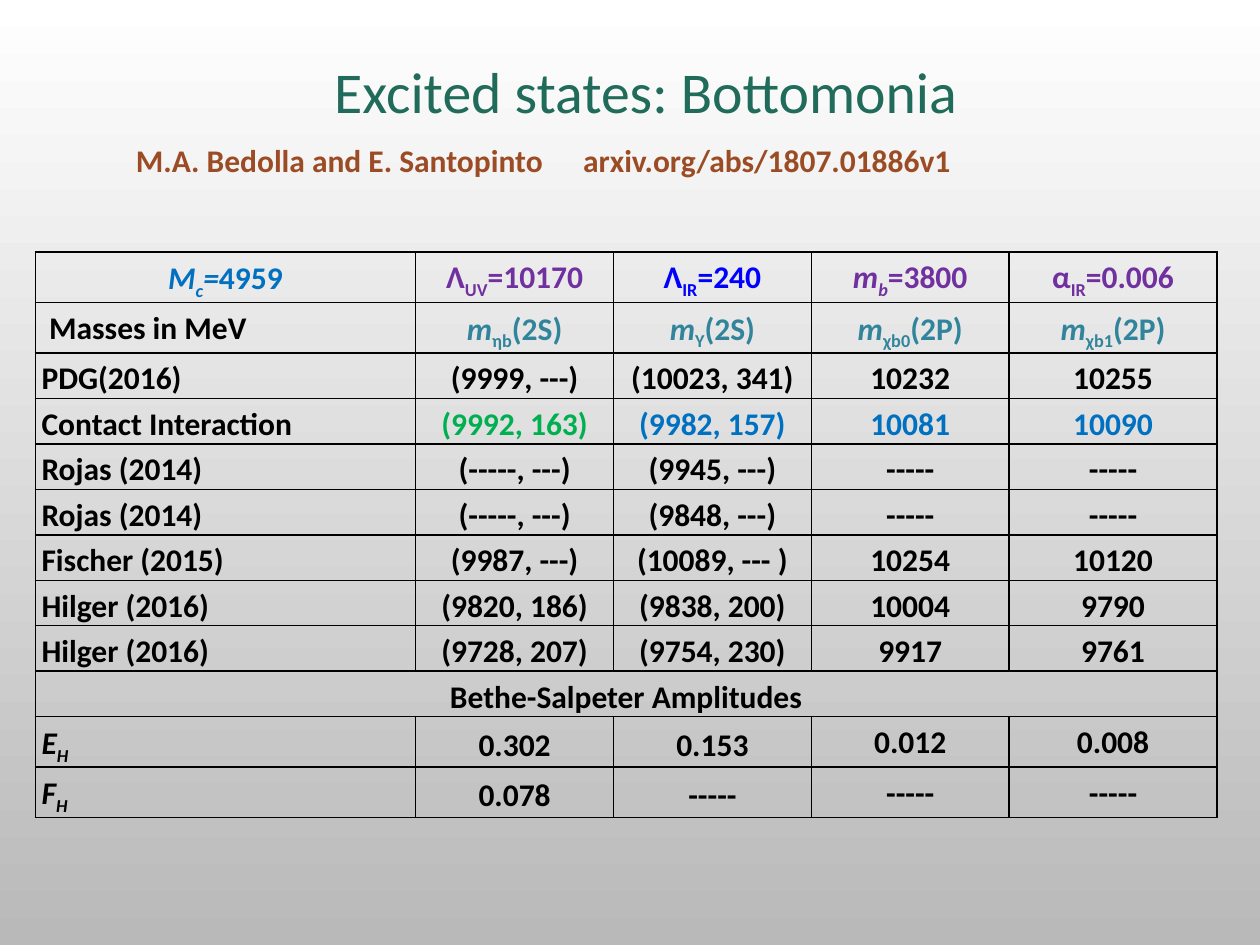
"""Build the slide comparing excited bottomonium masses and amplitudes."""
from lxml.etree import SubElement
from pptx import Presentation
from pptx.dml.color import RGBColor
from pptx.enum.text import MSO_ANCHOR, PP_ALIGN
from pptx.oxml.ns import qn
from pptx.util import Inches, Pt

TITLE = "Excited states: Bottomonia"
AUTHORS = "M.A. Bedolla and E. Santopinto"
LINK = "arxiv.org/abs/1807.01886v1"
PARAMETERS = [
    ([("M", "i"), ("c", "is"), ("=", "i"), ("4959", "")], "blue"),
    ([("Λ", ""), ("UV", "s"), ("=10170", "")], "purple"),
    ([("Λ", ""), ("IR", "s"), ("=240", "")], "bright"),
    ([("m", "i"), ("b", "is"), ("=3800", "")], "purple"),
    ([("α", ""), ("IR", "s"), ("=0.006", "")], "purple"),
]
STATES = [("ηb", "(2S)"), ("Υ", "(2S)"), ("χb0", "(2P)"), ("χb1", "(2P)")]
MASSES = [
    ("PDG(2016)", "(9999, ---)", "(10023, 341)", "10232", "10255"),
    ("Contact Interaction", "(9992, 163)", "(9982, 157)", "10081", "10090"),
    ("Rojas (2014)", "(-----, ---)", "(9945, ---)", "-----", "-----"),
    ("Rojas (2014)", "(-----, ---)", "(9848, ---)", "-----", "-----"),
    ("Fischer (2015)", "(9987, ---)", "(10089, --- )", "10254", "10120"),
    ("Hilger (2016)", "(9820, 186)", "(9838, 200)", "10004", "9790"),
    ("Hilger (2016)", "(9728, 207)", "(9754, 230)", "9917", "9761"),
]
HIGHLIGHT = ["black", "green", "blue", "blue", "blue"]
SECTION = "Bethe-Salpeter Amplitudes"
AMPLITUDES = [
    ("E", "0.302", "0.153", "0.012", "0.008"),
    ("F", "0.078", "-----", "-----", "-----"),
]
COLS = [3.02, 1.57, 1.57, 1.57, 1.65]
ROWS = [0.32, 0.4] + [0.31] * 10
THEME = {
    "font": "Calibri", "title_size": 33, "size": 18,
    "title": "206B5A", "citation": "9B4C25", "black": "000000",
    "blue": "0070C0", "bright": "0000FF", "purple": "7030A0",
    "teal": "31849B", "green": "00B050", "top": "FFFFFF", "bottom": "B9B9B9",
}


def rgb(name):
    return RGBColor.from_string(THEME[name])


def add_run(p, text, color, size="size", **formats):
    r = p.add_run()
    r.text = text
    for name, value in {"name": THEME["font"], "size": Pt(THEME[size]), **formats}.items():
        setattr(r.font, name, value)
    r.font.color.rgb = rgb(color)
    return r


def add_borders(cell):
    tc_pr = cell._tc.get_or_add_tcPr()
    for side in ("lnL", "lnR", "lnT", "lnB"):
        ln = SubElement(tc_pr, qn(f"a:{side}"), w=str(Pt(1)))
        fill = SubElement(ln, qn("a:solidFill"))
        SubElement(fill, qn("a:srgbClr"), val=THEME["black"])


def fill_cell(cell, runs, color, centered, formats):
    for name, value in formats.items():
        setattr(cell, name, value)
    p = cell.text_frame.paragraphs[0]
    p.alignment = PP_ALIGN.CENTER if centered else PP_ALIGN.LEFT
    p.line_spacing, p.space_after = 1.15, Pt(10)
    for text, style in runs:
        r = add_run(p, text, color, bold=True, italic="i" in style)
        if "s" in style:
            r.font._element.set("baseline", "-25000")


def table_rows():
    states = [([("m", "i"), (sub, "s"), (level, "")], "teal") for sub, level in STATES]
    rows = [PARAMETERS, [([("Masses in MeV", "")], "black")] + states]
    for values in MASSES:
        colors = HIGHLIGHT if values[0] == "Contact Interaction" else ["black"] * 5
        rows.append([([(v, "")], c) for v, c in zip(values, colors)])
    rows.append([([(SECTION, "")], "black")])
    for symbol, *values in AMPLITUDES:
        label = [(symbol, "i"), ("H", "is")]
        rows.append([(label, "black")] + [([(v, "")], "black") for v in values])
    return rows


def cell_formats(i, j):
    section = 2 + len(MASSES)
    middle = j > 0 and i > 1 and (i < section or j < 3)
    side, top = (0, 0) if i == 0 and j else (0.05, 0.01)
    left = 0.11 if (i, j) == (1, 0) else side
    return {
        "margin_left": Inches(left), "margin_right": Inches(side),
        "margin_top": Inches(top), "margin_bottom": 0,
        "vertical_anchor": MSO_ANCHOR.MIDDLE if middle else MSO_ANCHOR.TOP,
    }


def add_mass_table(s):
    frame = s.shapes.add_table(len(ROWS), len(COLS), Inches(0.28), Inches(2),
                               Inches(sum(COLS)), Inches(sum(ROWS)))
    table = frame.table
    table.first_row = table.horz_banding = False
    for col, width in zip(table.columns, COLS):
        col.width = Inches(width)
    for row, height in zip(table.rows, ROWS):
        row.height = Inches(height)
    for cell in table.iter_cells():
        add_borders(cell)
        cell.fill.background()
    for i, row in enumerate(table_rows()):
        spans = len(row) == 1
        if spans:
            table.cell(i, 0).merge(table.cell(i, len(COLS) - 1))
        for j, (runs, color) in enumerate(row):
            centered = j > 0 or i == 0 or spans
            fill_cell(table.cell(i, j), runs, color, centered, cell_formats(i, j))


def place_title(s):
    sp = s.shapes.title
    sp.left, sp.top, sp.width, sp.height = map(Inches, (0.46, 0.21, 9.33, 0.83))
    tf = sp.text_frame
    tf.vertical_anchor = MSO_ANCHOR.BOTTOM
    p = tf.paragraphs[0]
    p.alignment = PP_ALIGN.CENTER
    add_run(p, TITLE, "title", "title_size")


def add_citation(s):
    sp = s.shapes.add_textbox(*map(Inches, (0.98, 1.07, 8.5, 0.4)))
    tf = sp.text_frame
    tf.word_wrap = True
    p = tf.paragraphs[0]
    tabs = SubElement(p._p.get_or_add_pPr(), qn("a:tabLst"))
    SubElement(tabs, qn("a:tab"), pos=str(Inches(3.55)), algn="l")
    add_run(p, f"{AUTHORS}\t{LINK}", "citation", bold=True)


def main():
    prs = Presentation()
    prs.slide_width, prs.slide_height = Inches(10), Inches(7.5)
    s = prs.slides.add_slide(prs.slide_layouts[5])
    fill = s.background.fill
    fill.gradient()
    fill.gradient_angle = 270
    for stop, name, position in zip(fill.gradient_stops, ("top", "bottom"), (0, 1)):
        stop.color.rgb = rgb(name)
        stop.position = position
    add_mass_table(s)
    place_title(s)
    add_citation(s)
    prs.save("out.pptx")


if __name__ == "__main__":
    main()
